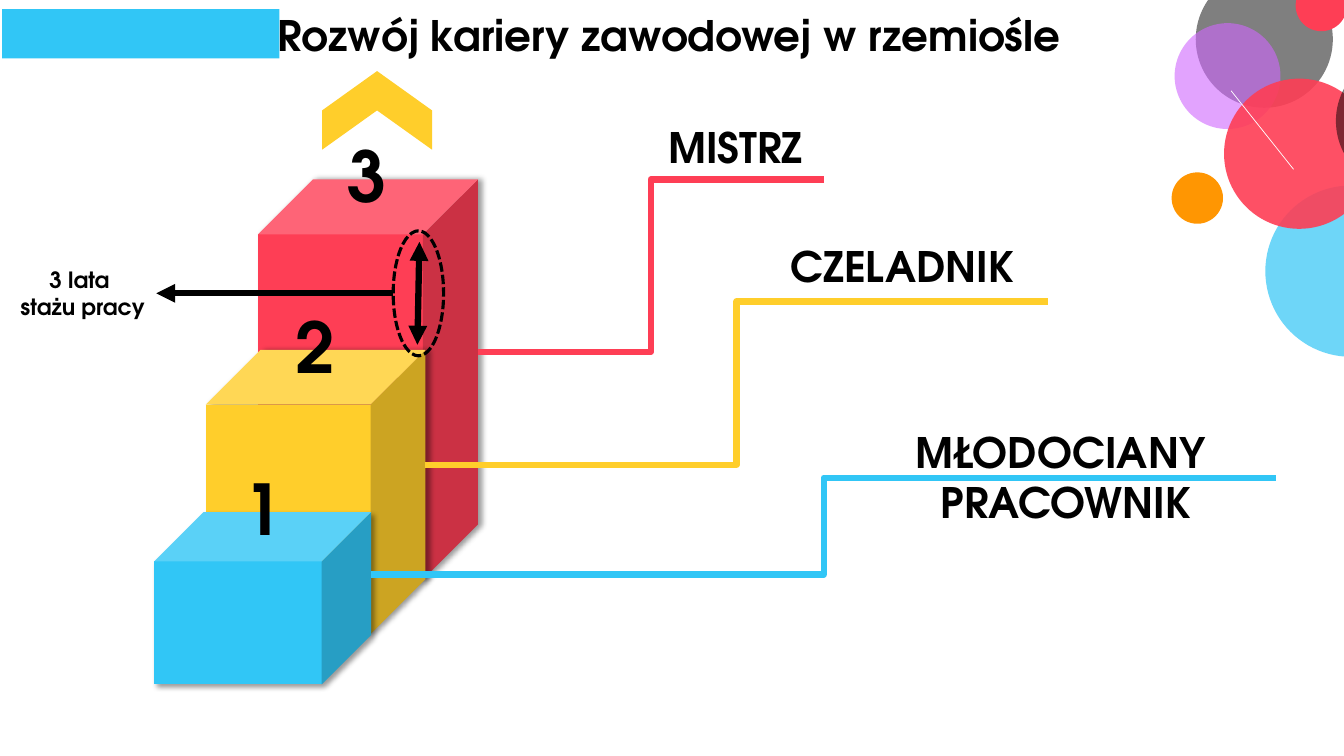
"""Build the slide on career steps in the crafts."""
from lxml.etree import SubElement
from pptx import Presentation
from pptx.dml.color import RGBColor
from pptx.enum.dml import MSO_LINE
from pptx.enum.shapes import MSO_CONNECTOR, MSO_SHAPE
from pptx.enum.text import MSO_AUTO_SIZE, PP_ALIGN
from pptx.oxml.ns import qn
from pptx.util import Inches, Pt

BLACK, WHITE = "000000", "FFFFFF"
RED, YELLOW, BLUE = "FE3E55", "FFCE2B", "31C6F6"
ORANGE, VIOLET = "FF9602", "CF66FE"


def color(code):
    return RGBColor.from_string(code)


class Board:
    font = "TeX Gyre Adventor"

    def __init__(self, slide):
        self.shapes = slide.shapes

    def text(self, box, lines, size, align=PP_ALIGN.LEFT, wrap=False):
        frame = self.shapes.add_textbox(*map(Inches, box)).text_frame
        frame.word_wrap = wrap
        frame.auto_size = MSO_AUTO_SIZE.SHAPE_TO_FIT_TEXT
        frame.text = "\n".join(lines)
        for para in frame.paragraphs:
            para.alignment = align
            font = para.font
            font.name, font.size, font.bold = self.font, Pt(size), True
            font.color.rgb = color(BLACK)

    def shape(self, kind, box, fill=None, alpha=100):
        item = self.shapes.add_shape(kind, *map(Inches, box))
        item.shadow.inherit = False
        item.line.fill.background()
        if fill is None:
            item.fill.background()
            return item
        item.fill.solid()
        item.fill.fore_color.rgb = color(fill)
        if alpha < 100:
            tone = item.fill._xPr.find(".//" + qn("a:srgbClr"))
            SubElement(tone, qn("a:alpha"), val=str(alpha * 1000))
        return item

    def cube(self, box, fill, depth=0.25, angle=0):
        item = self.shape(MSO_SHAPE.CUBE, box, fill)
        item.adjustments[0] = depth
        effects = item._element.spPr.find(qn("a:effectLst"))
        shade = SubElement(effects, qn("a:outerShdw"), blurRad=str(Pt(4)),
                           dist=str(Pt(3)), dir=str(angle * 60000),
                           algn="tl", rotWithShape="0")
        tone = SubElement(shade, qn("a:srgbClr"), val=BLACK)
        SubElement(tone, qn("a:alpha"), val="40000")

    def ring(self, box):
        line = self.shape(MSO_SHAPE.OVAL, box).line
        line.color.rgb = color(BLACK)
        line.width = Pt(2.25)
        line.dash_style = MSO_LINE.SQUARE_DOT

    def line(self, start, end, tint, width=4.5, bent=False, tips=()):
        kind = MSO_CONNECTOR.ELBOW if bent else MSO_CONNECTOR.STRAIGHT
        item = self.shapes.add_connector(kind, *map(Inches, start + end))
        item.line.color.rgb = color(tint)
        item.line.width = Pt(width)
        for tip in tips:
            SubElement(item.line._ln, qn(f"a:{tip}End"), type="triangle")
        SubElement(item._element.spPr, qn("a:effectLst"))


def main():
    deck = Presentation()
    deck.slide_width, deck.slide_height = Inches(13.33), Inches(7.5)
    board = Board(deck.slides.add_slide(deck.slide_layouts[6]))
    center = PP_ALIGN.CENTER

    board.text((1.56, 0.05, 10.27, 0.61),
               ["Rozwój kariery zawodowej w rzemiośle "], 30, center, True)

    steps = [
        ("3", (2.56, 1.78, 2.18, 3.97), RED, 0.25, 0),
        ("2", (2.04, 3.47, 2.18, 2.82), YELLOW, 0.25, 0),
        ("1", (1.53, 5.08, 2.15, 1.71), BLUE, 0.286, 45),
    ]
    for digit, box, tint, depth, angle in steps:
        board.cube(box, tint, depth, angle)
        board.text((box[0] + 0.79, box[1] - 0.51, 0.59, 0.94), [digit], 50)

    for start, end, tint in [
        ((4.74, 3.49), (8.17, 1.78), RED),
        ((4.22, 4.61), (10.39, 2.99), YELLOW),
        ((3.68, 5.7), (12.66, 4.74), BLUE),
    ]:
        board.line(start, end, tint, bent=True)

    board.shape(MSO_SHAPE.CHEVRON, (3.35, 0.55, 0.78, 1.09), YELLOW).rotation = 270

    board.text((6.53, 1.16, 1.55, 0.61), ["MISTRZ"], 30)
    board.text((7.74, 2.34, 2.44, 0.61), ["CZELADNIK"], 30)
    board.text((8.96, 4.18, 3.23, 1.11), ["MŁODOCIANY ", "PRACOWNIK"], 30, center)

    board.ring((3.9, 2.29, 0.5, 1.24))
    board.line((3.9, 2.91), (1.55, 2.91), BLACK, tips=["tail"])
    board.text((0.09, 2.59, 1.46, 0.64), ["3 lata ", "stażu pracy"], 16, center)

    for left, top, size, tint, alpha in [
        (11.86, -0.29, 1.36, BLACK, 50),
        (11.62, 1.71, 0.51, ORANGE, 100),
        (12.55, 1.84, 1.7, BLUE, 70),
        (11.65, 0.23, 1.05, VIOLET, 60),
        (12.14, 0.78, 1.49, RED, 90),
        (13.25, 0.52, 1.36, BLACK, 50),
        (12.85, -0.2, 0.51, RED, 100),
    ]:
        board.shape(MSO_SHAPE.OVAL, (left, top, size, size), tint, alpha)
    board.line((12.21, 0.9), (12.83, 1.68), WHITE, 0.5)

    board.shape(MSO_SHAPE.RECTANGLE, (0.02, 0.09, 2.75, 0.49), BLUE)
    board.line((4.16, 2.4), (4.14, 3.42), BLACK, tips=["head", "tail"])

    deck.save("out.pptx")


if __name__ == "__main__":
    main()
